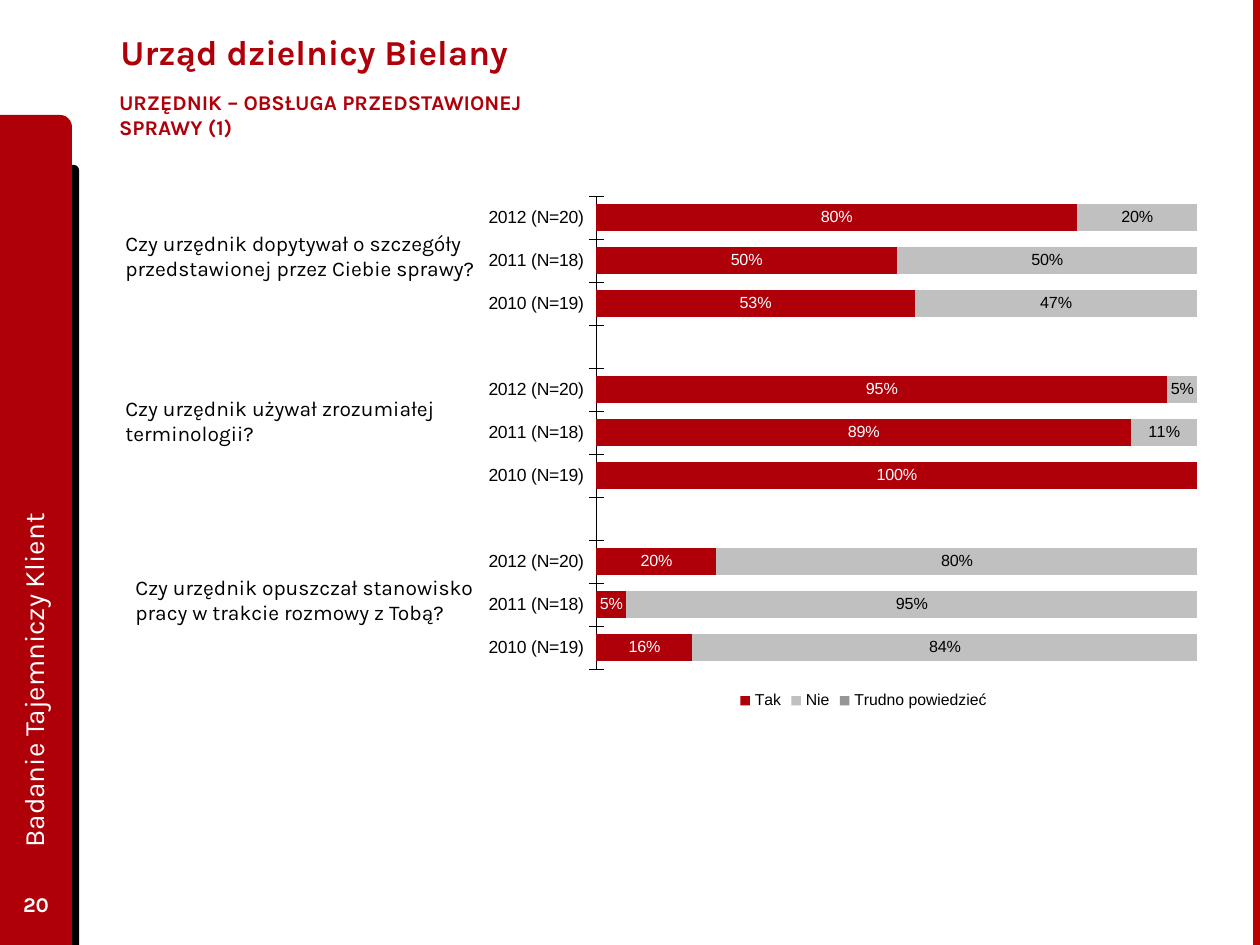
from lxml import etree
from pptx import Presentation
from pptx.chart.data import CategoryChartData
from pptx.dml.color import RGBColor
from pptx.enum.chart import XL_CHART_TYPE, XL_LABEL_POSITION, XL_LEGEND_POSITION, XL_TICK_MARK
from pptx.enum.shapes import MSO_SHAPE
from pptx.enum.text import MSO_ANCHOR, PP_ALIGN
from pptx.oxml.ns import qn
from pptx.util import Emu, Pt

BAR_STACKED = XL_CHART_TYPE.BAR_STACKED
LABEL_CENTER = XL_LABEL_POSITION.CENTER
LEGEND_BOTTOM = XL_LEGEND_POSITION.BOTTOM
TICK_CROSS = XL_TICK_MARK.CROSS
ROUND_CORNER, RECTANGLE = MSO_SHAPE.ROUND_1_RECTANGLE, MSO_SHAPE.RECTANGLE
TOP, MIDDLE = MSO_ANCHOR.TOP, MSO_ANCHOR.MIDDLE
LEFT, CENTER = PP_ALIGN.LEFT, PP_ALIGN.CENTER

RED = RGBColor(0xAF, 0x00, 0x0A)
EDGE_RED = RGBColor(0xBD, 0x00, 0x00)
BLACK = RGBColor(0x00, 0x00, 0x00)
WHITE = RGBColor(0xFF, 0xFF, 0xFF)
LIGHT_GRAY = RGBColor(0xC0, 0xC0, 0xC0)
GRAY = RGBColor(0x96, 0x96, 0x96)

SLIDE_WIDTH, SLIDE_HEIGHT = 1260, 945
PIXELS_PER_INCH = 126

QUESTIONS = [
    ("Czy urzędnik dopytywał o szczegóły przedstawionej przez Ciebie sprawy?", (0, 0, 407, 63)),
    ("Czy urzędnik używał zrozumiałej terminologii?", (0, 165, 407, 63)),
    ("Czy urzędnik opuszczał stanowisko pracy w trakcie rozmowy z Tobą?", (10, 344, 369, 63)),
]
YEARS = ["2012 (N=20)", "2011 (N=18)", "2010 (N=19)"]
CATEGORIES = YEARS + [""] + YEARS + [""] + YEARS
SERIES = [
    ("Tak", [0.8, 0.5, 0.53, None, 0.95, 0.89, 1, None, 0.2, 0.05, 0.16], RED, WHITE),
    ("Nie", [0.2, 0.5, 0.47, None, 0.05, 0.11, None, None, 0.8, 0.95, 0.84], LIGHT_GRAY, BLACK),
    ("Trudno powiedzieć", [None] * len(CATEGORIES), GRAY, BLACK),
]


def px(length):
    """Turn pixels into EMU."""
    return Emu(round(length * 914400 / PIXELS_PER_INCH))


def set_font(font, size, color, name="Arial", bold=False):
    """Format a font."""
    font.size, font.name, font.bold = Pt(size), name, bold
    font.color.rgb = color


def add_text(slide, text, box, size=12, color=BLACK, bold=False, align=LEFT,
             anchor=TOP, wrap=True, side_inset=None, rotation=0):
    """Add a text box with one formatted paragraph."""
    shape = slide.shapes.add_textbox(*map(px, box))
    shape.rotation = rotation
    frame = shape.text_frame
    frame.word_wrap, frame.vertical_anchor = wrap, anchor
    if side_inset is not None:
        frame.margin_left = frame.margin_right = px(side_inset)
    paragraph = frame.paragraphs[0]
    paragraph.alignment = align
    run = paragraph.add_run()
    run.text = text
    set_font(run.font, size, color, "Karla", bold)


def add_block(slide, kind, box, color):
    """Add a flat filled shape without outline."""
    shape = slide.shapes.add_shape(kind, *map(px, box))
    shape.shadow.inherit = False
    shape.fill.solid()
    shape.fill.fore_color.rgb = color
    shape.line.fill.background()


def add_sidebar(slide, left, top, width, height):
    """Add the red side band with its black backing, study name and page number."""
    add_block(slide, ROUND_CORNER, (left + width - 23, top + 50, 30, height - 50), BLACK)
    add_block(slide, ROUND_CORNER, (left, top, width, height), RED)
    add_text(slide, "20", (left, top + 764, width, 50), color=WHITE, bold=True,
             align=CENTER, anchor=MIDDLE)
    add_text(slide, "Badanie Tajemniczy Klient", (left - 330, top + 350, 726, 64),
             size=16, color=WHITE, anchor=MIDDLE, rotation=270)


def add_heading(slide, left, top, width):
    """Add the title and subtitle."""
    add_text(slide, "Urząd dzielnicy Bielany", (left + 14, top, width, 91),
             size=20, color=RED, bold=True, anchor=MIDDLE)
    add_text(slide, "URZĘDNIK – OBSŁUGA PRZEDSTAWIONEJ SPRAWY (1)",
             (left, top + 77, 485, 42), color=RED, bold=True, wrap=False, side_inset=25)


def add_questions(slide, left, top):
    """Add the question beside each group of bars."""
    for text, (x, y, width, height) in QUESTIONS:
        add_text(slide, text, (left + x, top + y, width, height))


def place_plot(chart, **fractions):
    """Fix the inner plot area as fractions of the chart."""
    plot_area = chart.plots[0]._element.getparent()
    for old_layout in plot_area.findall(qn("c:layout")):
        plot_area.remove(old_layout)
    layout = etree.Element(qn("c:layout"))
    plot_area.insert(0, layout)
    manual = etree.SubElement(layout, qn("c:manualLayout"))
    settings = {"layoutTarget": "inner", "xMode": "edge", "yMode": "edge", **fractions}
    for tag, value in settings.items():
        etree.SubElement(manual, qn(f"c:{tag}")).set("val", str(value))


def format_axes(chart):
    """Format the category axis and hide the value axis."""
    category_axis, value_axis = chart.category_axis, chart.value_axis
    category_axis.reverse_order = True
    category_axis.major_tick_mark = TICK_CROSS
    category_axis.format.line.color.rgb = BLACK
    category_axis.format.line.width = Pt(0.25)
    set_font(category_axis.tick_labels.font, 10, BLACK)
    value_axis.minimum_scale, value_axis.maximum_scale = 0, 1
    value_axis.major_unit = 0.2
    value_axis.has_major_gridlines = False
    value_axis.visible = False


def add_answer_chart(slide, left, top, width, height):
    """Add the stacked bars of answers by year."""
    data = CategoryChartData(number_format="0%")
    data.categories = CATEGORIES
    for name, values, _, _ in SERIES:
        data.add_series(name, values)
    box = map(px, (left, top, width, height))
    chart = slide.shapes.add_chart(BAR_STACKED, *box, data).chart
    chart.has_title = False
    set_font(chart.font, 8, BLACK)
    format_axes(chart)
    place_plot(chart, x=0.147, y=0.002, w=0.794, h=0.91)
    chart.has_legend = True
    chart.legend.position = LEGEND_BOTTOM
    chart.legend.include_in_layout = False
    set_font(chart.legend.font, 9, BLACK)
    plot = chart.plots[0]
    plot.gap_width, plot.overlap, plot.vary_by_categories = 60, 100, False
    for series, (_, _, fill_color, label_color) in zip(plot.series, SERIES):
        series.format.fill.solid()
        series.format.fill.fore_color.rgb = fill_color
        labels = series.data_labels
        labels.show_value = True
        labels.number_format, labels.number_format_is_linked = "0%", False
        labels.position = LABEL_CENTER
        set_font(labels.font, 9.2, label_color)


def main():
    """Build the slide and save it."""
    presentation = Presentation()
    presentation.slide_width, presentation.slide_height = px(SLIDE_WIDTH), px(SLIDE_HEIGHT)
    slide = presentation.slides.add_slide(presentation.slide_layouts[6])
    add_sidebar(slide, 0, 115, 72, 830)
    add_block(slide, RECTANGLE, (1253, 0, 7, SLIDE_HEIGHT), EDGE_RED)
    add_heading(slide, 94, 6, 979)
    add_questions(slide, 113, 224)
    add_answer_chart(slide, 485, 195, 757, 520)
    presentation.save("out.pptx")


if __name__ == "__main__":
    main()
